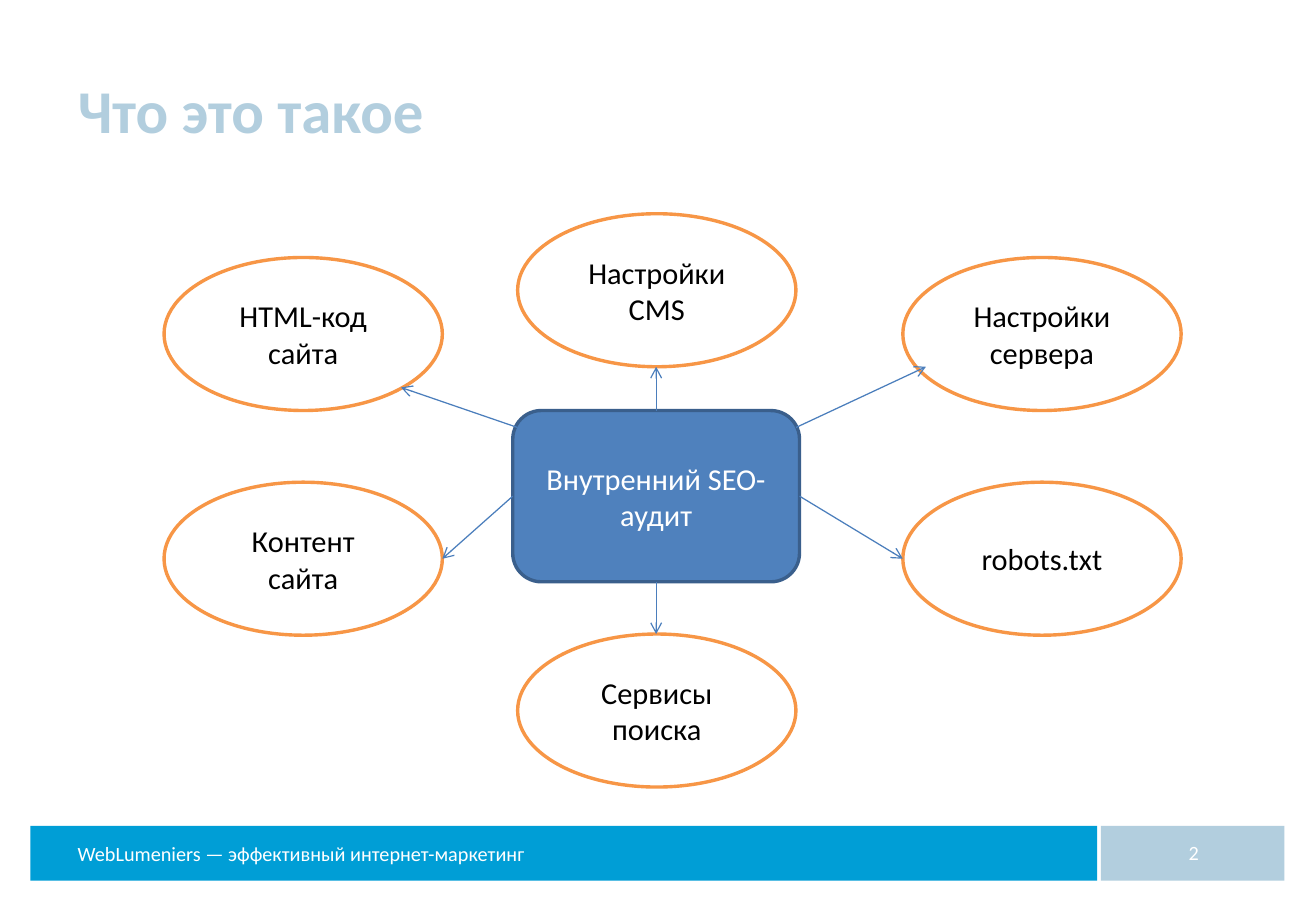
"""Build the slide that maps the parts of an internal SEO audit."""
from typing import NamedTuple

from lxml import etree
from pptx import Presentation
from pptx.dml.color import RGBColor
from pptx.enum.shapes import MSO_CONNECTOR, MSO_SHAPE
from pptx.enum.text import MSO_ANCHOR, PP_ALIGN
from pptx.oxml.ns import qn
from pptx.util import Inches, Pt

RECTANGLE = MSO_SHAPE.RECTANGLE
ROUNDED = MSO_SHAPE.ROUNDED_RECTANGLE
ELLIPSE = MSO_SHAPE.OVAL
STRAIGHT = MSO_CONNECTOR.STRAIGHT
MIDDLE = MSO_ANCHOR.MIDDLE
TOP = MSO_ANCHOR.TOP
LEFT = PP_ALIGN.LEFT
CENTER = PP_ALIGN.CENTER

FONT = "Calibri"
WHITE = RGBColor(0xFF, 0xFF, 0xFF)
BLACK = RGBColor(0x00, 0x00, 0x00)
PALE_BLUE = RGBColor(0xB2, 0xCE, 0xDE)
BRIGHT_BLUE = RGBColor(0x00, 0x9E, 0xD6)
HUB_BLUE = RGBColor(0x4F, 0x81, 0xBD)
HUB_EDGE = RGBColor(0x3A, 0x5F, 0x8C)
ORANGE = RGBColor(0xF7, 0x96, 0x46)
ARROW_BLUE = RGBColor(0x4B, 0x7E, 0xBC)


class Box(NamedTuple):
    left: float
    top: float
    width: float
    height: float


class Point(NamedTuple):
    x: float
    y: float


class Topic(NamedTuple):
    label: str
    left: float
    top: float
    arrow_start: Point
    arrow_end: Point


TOPIC_WIDTH, TOPIC_HEIGHT = 2.29, 1.26
LEFT_COLUMN, MIDDLE_COLUMN, RIGHT_COLUMN = 1.35, 4.26, 7.43
UPPER_ROW, LOWER_ROW = 2.12, 3.97
HUB = Box(4.22, 3.38, 2.36, 1.41)
HUB_X = HUB.left + HUB.width / 2
HUB_Y = HUB.top + HUB.height / 2
HUB_RIGHT = HUB.left + HUB.width
HUB_BOTTOM = HUB.top + HUB.height
CORNER_Y = 3.52
LOWER_Y = LOWER_ROW + TOPIC_HEIGHT / 2

TOPICS = [
    Topic("HTML-код сайта", LEFT_COLUMN, UPPER_ROW,
          Point(4.26, CORNER_Y), Point(3.3, 3.19)),
    Topic("Настройки сервера", RIGHT_COLUMN, UPPER_ROW,
          Point(6.55, CORNER_Y), Point(7.62, 3.02)),
    Topic("Настройки CMS", MIDDLE_COLUMN, 1.76,
          Point(HUB_X, HUB.top), Point(HUB_X, 3.02)),
    Topic("Контент сайта", LEFT_COLUMN, LOWER_ROW,
          Point(HUB.left, HUB_Y), Point(LEFT_COLUMN + TOPIC_WIDTH, LOWER_Y)),
    Topic("robots.txt", RIGHT_COLUMN, LOWER_ROW,
          Point(HUB_RIGHT, HUB_Y), Point(RIGHT_COLUMN, LOWER_Y)),
    Topic("Сервисы поиска", MIDDLE_COLUMN, 5.22,
          Point(HUB_X, HUB_BOTTOM), Point(HUB_X, 5.22)),
]


def write(shape, text: str, size: float, color: RGBColor, align=CENTER,
          anchor=MIDDLE, bold: bool = False) -> None:
    """Put one formatted paragraph into a shape."""
    frame = shape.text_frame
    frame.text = text
    frame.word_wrap = True
    frame.vertical_anchor = anchor
    paragraph = frame.paragraphs[0]
    paragraph.alignment = align
    font = paragraph.runs[0].font
    font.name, font.size, font.bold = FONT, Pt(size), bold
    font.color.rgb = color


def add_figure(slide, kind, box: Box, fill: RGBColor, edge: RGBColor | None = None):
    """Add a filled shape, outlined when an edge colour is given."""
    figure = slide.shapes.add_shape(kind, *map(Inches, box))
    figure.shadow.inherit = False
    figure.fill.solid()
    figure.fill.fore_color.rgb = fill
    if edge is None:
        figure.line.fill.background()
    else:
        figure.line.color.rgb = edge
        figure.line.width = Pt(2)
    return figure


def add_label(slide, box: Box, text: str, align, anchor) -> None:
    """Add a white footer label."""
    label = slide.shapes.add_textbox(*map(Inches, box))
    write(label, text, 12, WHITE, align, anchor)


def add_arrow(slide, start: Point, end: Point) -> None:
    """Draw a thin line with an open arrowhead at its end."""
    arrow = slide.shapes.add_connector(STRAIGHT, *map(Inches, (*start, *end)))
    arrow.line.color.rgb = ARROW_BLUE
    arrow.line.width = Pt(0.75)
    etree.SubElement(arrow.line._get_or_add_ln(), qn("a:tailEnd"), type="arrow")
    etree.SubElement(arrow._element.spPr, qn("a:effectLst"))


def add_title(slide, box: Box, text: str) -> None:
    """Place and format the title placeholder."""
    title = slide.shapes.title
    title.left, title.top, title.width, title.height = map(Inches, box)
    write(title, text, 36, PALE_BLUE, LEFT, bold=True)


def main() -> None:
    """Assemble and save the slide."""
    deck = Presentation()
    deck.slide_width, deck.slide_height = Inches(10.83), Inches(7.5)
    slide = deck.slides.add_slide(deck.slide_layouts[5])

    add_figure(slide, RECTANGLE, Box(9.06, 6.8, 1.51, 0.45), PALE_BLUE)
    add_figure(slide, RECTANGLE, Box(0.25, 6.8, 8.78, 0.45), BRIGHT_BLUE)
    add_label(slide, Box(0.54, 6.88, 8.29, 0.3),
              "WebLumeniers — эффективный интернет-маркетинг", LEFT, TOP)
    add_title(slide, Box(0.54, 0.4, 9.75, 1), "Что это такое")
    add_label(slide, Box(9.08, 6.82, 1.49, 0.4), "2", CENTER, MIDDLE)

    hub = add_figure(slide, ROUNDED, HUB, HUB_BLUE, HUB_EDGE)
    write(hub, "Внутренний SEO-аудит", 18, WHITE)
    for topic in TOPICS:
        box = Box(topic.left, topic.top, TOPIC_WIDTH, TOPIC_HEIGHT)
        write(add_figure(slide, ELLIPSE, box, WHITE, ORANGE), topic.label, 18, BLACK)
    for topic in TOPICS:
        add_arrow(slide, topic.arrow_start, topic.arrow_end)

    deck.save("out.pptx")


if __name__ == "__main__":
    main()
